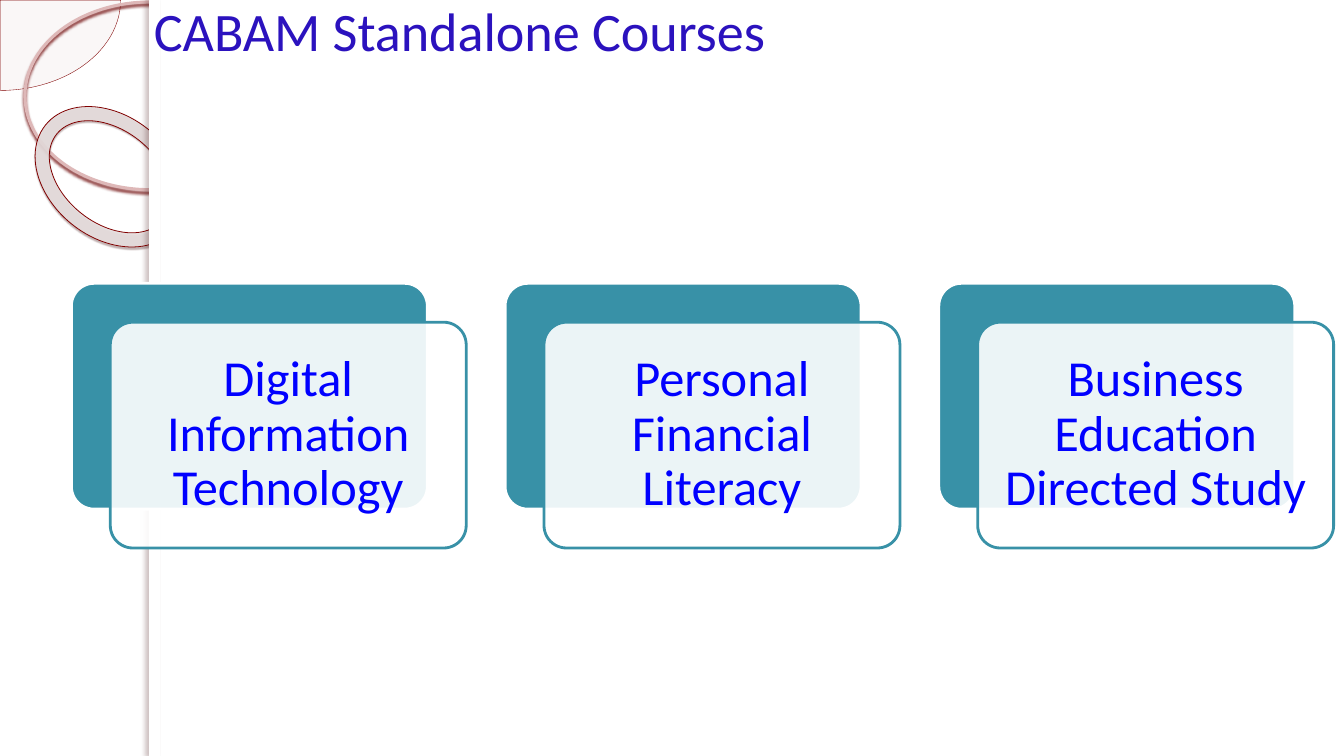
from lxml.etree import SubElement
from pptx import Presentation
from pptx.dml.color import RGBColor
from pptx.enum.shapes import MSO_SHAPE as Preset
from pptx.enum.text import MSO_ANCHOR as Anchor, PP_ALIGN as Align
from pptx.oxml.ns import qn
from pptx.util import Cm, Pt

WHITE = RGBColor(0xFF, 0xFF, 0xFF)
TEAL = RGBColor(0x38, 0x91, 0xA7)
BLUE = RGBColor(0x00, 0x00, 0xFF)
INDIGO = RGBColor(0x2B, 0x12, 0xBE)
BLUSH = RGBColor(0xF0, 0xE8, 0xE8)
ROSE = RGBColor(0xDE, 0xB8, 0xB8)
ASH = RGBColor(0xE6, 0xDE, 0xDE)
MAROON = RGBColor(0x80, 0x00, 0x00)
CRIMSON = RGBColor(0x6C, 0x03, 0x03)
UMBER = RGBColor(0x3F, 0x0C, 0x0C)

COURSES = [
    "Digital Information Technology",
    "Personal Financial Literacy",
    "Business Education Directed Study",
]
CARD_SIZE = (8.97, 5.69)
CARD_LEFT, CARD_TOP, CARD_STEP = 1.8, 7.14, 10.93
CARD_SHIFT = 0.98


class SlideBuilder:
    font = "Calibri"

    def __init__(self, deck):
        self.page = deck.slides.add_slide(deck.slide_layouts[6])

    def shape(self, preset, left, top, width, height, fill=None, opacity=100,
              line=None, weight=0, adjust=()):
        """Add a flat preset shape; lengths in cm, opacity in percent."""
        item = self.page.shapes.add_shape(
            preset, Cm(left), Cm(top), Cm(width), Cm(height))
        item.shadow.inherit = False
        for index, value in enumerate(adjust):
            item.adjustments[index] = value
        if fill is None:
            item.fill.background()
        else:
            item.fill.solid()
            item.fill.fore_color.rgb = fill
            if opacity < 100:
                color = item.element.spPr.find(qn("a:solidFill"))[0]
                self.set_alpha(color, opacity)
        if line is None:
            item.line.fill.background()
        else:
            item.line.color.rgb = line
            item.line.width = Pt(weight)
        return item

    def set_alpha(self, color, percent):
        SubElement(color, qn("a:alpha"), val=str(percent * 1000))

    def cast_shadow(self, item, color, opacity, blur, distance, angle):
        effects = item.element.spPr.find(qn("a:effectLst"))
        shadow = SubElement(
            effects, qn("a:outerShdw"), blurRad=str(Pt(blur)),
            dist=str(Pt(distance)), dir=str(angle * 60000), rotWithShape="0")
        shade = SubElement(shadow, qn("a:srgbClr"), val=str(color))
        self.set_alpha(shade, opacity)

    def add_text(self, item, text, size, color, align):
        """Fill a shape or text box with one middle-anchored paragraph."""
        frame = item.text_frame
        frame.word_wrap = True
        frame.vertical_anchor = Anchor.MIDDLE
        para = frame.paragraphs[0]
        para.alignment = align
        span = para.add_run()
        span.text = text
        span.font.name = self.font
        span.font.size = Pt(size)
        span.font.color.rgb = color
        return frame

    def title(self, text):
        box = self.page.shapes.add_textbox(
            Cm(3.63), Cm(-0.41), Cm(17.45), Cm(2.34))
        self.add_text(box, text, 38.7, INDIGO, Align.LEFT)

    def sidebar(self):
        """Draw the rings on the left and the white panel that crops them."""
        self.shape(Preset.PIE, -3.03, -2.27, 6.07, 4.55, BLUSH, 33,
                   MAROON, 0.25, adjust=(0, 54))
        ring = self.shape(Preset.OVAL, 0.63, 0.05, 6.3, 4.73,
                          line=ROSE, weight=2.15)
        self.cast_shadow(ring, CRIMSON, 85, 2, 2, 90)
        donut = self.shape(Preset.DONUT, 0.69, 2.92, 4.17, 3.07, ASH, 90,
                           MAROON, 0.58, adjust=(0.118,))
        donut.rotation = 38.6
        self.cast_shadow(donut, UMBER, 35, 1, 1.2, 75)
        self.shape(Preset.RECTANGLE, 3.76, 0, 30.11, 19.05, WHITE)
        edge = self.shape(Preset.RECTANGLE, 3.76, 0, 0.28, 19.05, WHITE)
        self.cast_shadow(edge, UMBER, 25, 3, 3, 180)

    def course_card(self, left, top, text):
        self.shape(Preset.ROUNDED_RECTANGLE, left, top, *CARD_SIZE,
                   TEAL, line=WHITE, weight=2, adjust=(0.1,))
        front = self.shape(Preset.ROUNDED_RECTANGLE, left + CARD_SHIFT,
                           top + CARD_SHIFT, *CARD_SIZE, WHITE, 90,
                           TEAL, 2, adjust=(0.1,))
        frame = self.add_text(front, text, 36, BLUE, Align.CENTER)
        frame.margin_left = frame.margin_right = Cm(0.38)
        frame.margin_top = frame.margin_bottom = Cm(0.38)
        frame.paragraphs[0].line_spacing = 0.9


def main():
    deck = Presentation()
    deck.slide_width, deck.slide_height = Cm(33.87), Cm(19.05)
    builder = SlideBuilder(deck)
    builder.sidebar()
    builder.title("CABAM Standalone Courses")
    for index, course in enumerate(COURSES):
        builder.course_card(CARD_LEFT + index * CARD_STEP, CARD_TOP, course)
    deck.save("out.pptx")


if __name__ == "__main__":
    main()
